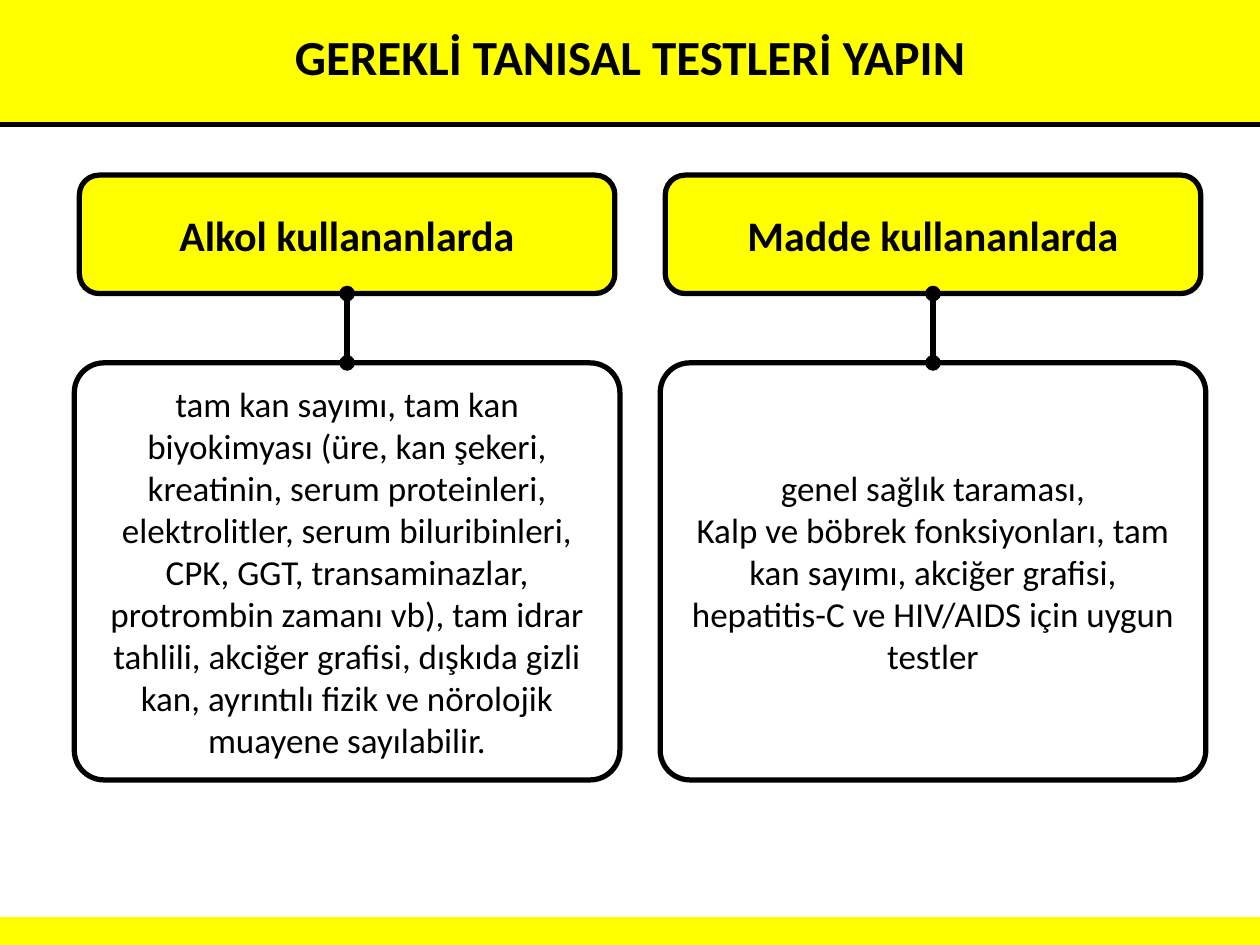
from lxml import etree
from pptx import Presentation
from pptx import util as u
from pptx.dml.color import RGBColor
from pptx.enum import shapes as s, text as t
from pptx.oxml.ns import qn

TITLE = "GEREKLİ TANISAL TESTLERİ YAPIN"
GROUPS = [
    ("Alkol kullananlarda", [
        "tam kan sayımı, tam kan biyokimyası (üre, kan şekeri, kreatinin, "
        "serum proteinleri, elektrolitler, serum biluribinleri, CPK, GGT, "
        "transaminazlar, protrombin zamanı vb), tam idrar tahlili, akciğer "
        "grafisi, dışkıda gizli kan, ayrıntılı fizik ve nörolojik muayene "
        "sayılabilir."]),
    ("Madde kullananlarda", [
        "genel sağlık taraması,",
        "Kalp ve böbrek fonksiyonları, tam kan sayımı, akciğer grafisi, "
        "hepatitis-C ve HIV/AIDS için uygun testler"]),
]
INK = {"yellow": "FFFF00", "black": "000000", "white": "FFFFFF"}
FONT = "Calibri"
WIDE, HIGH = 10, 7.5
MID, STEP = 2.755, 4.65          # centre of first column, column pitch
HEAD = (1.39, 4.25, 0.94)        # top, width, height
BODY = (2.88, 4.33, 3.31)


def color(name):
    return RGBColor.from_string(INK[name])


def write(shape, lines, size, bold=False):
    frame = shape.text_frame
    frame.word_wrap = True
    frame.vertical_anchor = t.MSO_ANCHOR.MIDDLE
    for i, line in enumerate(lines):
        para = frame.paragraphs[0] if i == 0 else frame.add_paragraph()
        para.alignment = t.PP_ALIGN.CENTER
        run = para.add_run()
        run.text = line
        run.font.name, run.font.size = FONT, u.Pt(size)
        run.font.bold = bold
        run.font.color.rgb = color("black")


def block(kind, x, y, w, h, fill, edge, width):
    shape = slide.shapes.add_shape(kind, *map(u.Inches, (x, y, w, h)))
    shape.shadow.inherit = False
    shape.fill.solid()
    shape.fill.fore_color.rgb = color(fill)
    shape.line.color.rgb = color(edge)
    shape.line.width = u.Pt(width)
    return shape


def rule(x1, y1, x2, y2, dots=False):
    line = slide.shapes.add_connector(
        s.MSO_CONNECTOR.STRAIGHT, *map(u.Inches, (x1, y1, x2, y2)))
    line.line.color.rgb = color("black")
    line.line.width = u.Pt(3)
    if dots:
        for end in ("a:headEnd", "a:tailEnd"):
            etree.SubElement(line.line._get_or_add_ln(), qn(end), type="oval")
    etree.SubElement(line.element.spPr, qn("a:effectLst"))
    return line


deck = Presentation()
deck.slide_width, deck.slide_height = u.Inches(WIDE), u.Inches(HIGH)
slide = deck.slides.add_slide(deck.slide_layouts[5])

# Top and bottom bands
for y, h in ((0, 0.99), (7.29, 0.21)):
    block(s.MSO_SHAPE.RECTANGLE, 0, y, WIDE, h, "yellow", "yellow", 2)
rule(0, 0.99, WIDE, 0.99)

# Title, raised above the bands
title = slide.shapes.title
title.left, title.top = u.Inches(0.5), u.Inches(-0.18)
title.width, title.height = u.Inches(9), u.Inches(1.25)
write(title, [TITLE], 28, bold=True)
title.element.getparent().append(title.element)

# One column for each group: heading, tests, link
for i, (name, tests) in enumerate(GROUPS):
    mid = MID + i * STEP
    round_box = s.MSO_SHAPE.ROUNDED_RECTANGLE
    top, w, h = BODY
    body = block(round_box, mid - w / 2, top, w, h, "white", "black", 3)
    body.adjustments[0] = 0.071
    write(body, tests, 20)
    top, w, h = HEAD
    head = block(round_box, mid - w / 2, top, w, h, "yellow", "black", 3)
    write(head, [name], 24, bold=True)
    link = rule(mid, top + h, mid, BODY[0], dots=True)
    link.begin_connect(head, 2)
    link.end_connect(body, 0)

deck.save("out.pptx")
